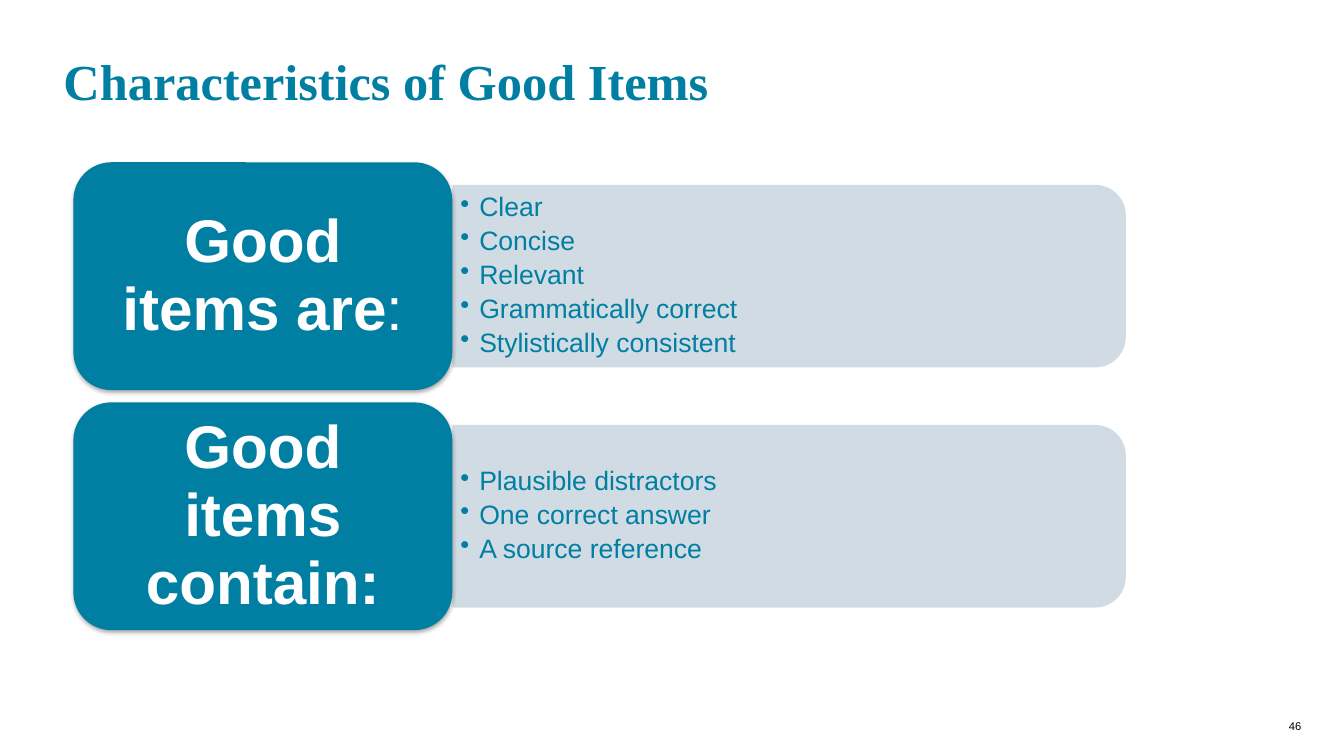
from dataclasses import dataclass

from lxml import etree
from pptx import Presentation
from pptx.dml.color import RGBColor
from pptx.enum.shapes import MSO_SHAPE
from pptx.enum.text import MSO_ANCHOR, PP_ALIGN
from pptx.oxml import parse_xml
from pptx.oxml.ns import nsdecls, qn
from pptx.shapes.autoshape import Shape
from pptx.slide import Slide
from pptx.text.text import TextFrame
from pptx.util import Cm, Pt

ROUNDED = MSO_SHAPE.ROUNDED_RECTANGLE
ROUNDED_TOP = MSO_SHAPE.ROUND_2_SAME_RECTANGLE
MIDDLE = MSO_ANCHOR.MIDDLE
CENTER = PP_ALIGN.CENTER

TEAL = RGBColor(0x00, 0x7F, 0xA3)
PALE = RGBColor(0xCC, 0xD8, 0xE0)
WHITE = RGBColor(0xFF, 0xFF, 0xFF)
BLACK = RGBColor(0x00, 0x00, 0x00)
BODY_FONT = "Arial"
TITLE_FONT = "Times New Roman"

CARD_LEFT, CARD_TOP = 1.85, 4.09
CARD_WIDTH, CARD_HEIGHT = 9.55, 5.74
ROW_STEP = 6.05
PANEL_LEFT = CARD_LEFT + CARD_WIDTH
PANEL_WIDTH, PANEL_HEIGHT = 16.97, 4.6
BULLETS_WIDTH, BULLETS_HEIGHT = 16.74, 4.14
BULLET_INDENT = Cm(0.48)


@dataclass(frozen=True)
class Row:
    heading: str
    ending: str  # closing part of the heading, not bold
    bullets: tuple[str, ...]


ROWS = (
    Row("Good items are", ":",
        ("Clear", "Concise", "Relevant", "Grammatically correct", "Stylistically consistent")),
    Row("Good items contain:", "",
        ("Plausible distractors", "One correct answer", "A source reference")),
)


def set_margins(frame: TextFrame, horizontal: float, vertical: float) -> None:
    frame.margin_left = frame.margin_right = Cm(horizontal)
    frame.margin_top = frame.margin_bottom = Cm(vertical)


def add_text_box(slide: Slide, left: float, top: float, width: float, height: float) -> TextFrame:
    frame = slide.shapes.add_textbox(Cm(left), Cm(top), Cm(width), Cm(height)).text_frame
    frame.word_wrap = True
    return frame


def add_label(frame: TextFrame, text: str, font_name: str, size: int, color: RGBColor,
              bold: bool = False) -> None:
    paragraph = frame.paragraphs[0]
    paragraph.text = text
    font = paragraph.font
    font.name, font.size, font.bold = font_name, Pt(size), bold
    font.color.rgb = color


def add_filled_shape(slide: Slide, kind: MSO_SHAPE, left: float, top: float,
                     width: float, height: float, color: RGBColor) -> Shape:
    shape = slide.shapes.add_shape(kind, Cm(left), Cm(top), Cm(width), Cm(height))
    shape.shadow.inherit = False
    shape.fill.solid()
    shape.fill.fore_color.rgb = color
    shape.line.fill.background()
    return shape


def add_panel(slide: Slide, middle: float) -> None:
    """Draw the pale bar: a shape with two round top corners, turned to the right."""
    center = PANEL_LEFT + PANEL_WIDTH / 2
    panel = add_filled_shape(slide, ROUNDED_TOP, center - PANEL_HEIGHT / 2,
                             middle - PANEL_WIDTH / 2, PANEL_HEIGHT, PANEL_WIDTH, PALE)
    panel.rotation = 90
    color = panel._element.spPr.find(qn("a:solidFill"))[0]
    etree.SubElement(color, qn("a:alpha"), val="90000")


def add_bullets(slide: Slide, middle: float, bullets: tuple[str, ...]) -> None:
    frame = add_text_box(slide, PANEL_LEFT, middle - BULLETS_HEIGHT / 2,
                         BULLETS_WIDTH, BULLETS_HEIGHT)
    frame.vertical_anchor = MIDDLE
    set_margins(frame, 0.2, 0.1)
    frame.text = "\n".join(bullets)
    for paragraph in frame.paragraphs:
        paragraph.line_spacing = 0.9
        paragraph.space_after = Pt(3.7)
        paragraph.font.name = BODY_FONT
        paragraph.font.size = Pt(19)
        paragraph.font.color.rgb = TEAL
        properties = paragraph._p.get_or_add_pPr()
        properties.set("marL", str(BULLET_INDENT))
        properties.set("indent", str(-BULLET_INDENT))
        bullet = parse_xml(f'<a:buChar {nsdecls("a")} char="•"/>')
        properties.insert_element_before(bullet, "a:tabLst", "a:defRPr", "a:extLst")


def add_card(slide: Slide, top: float, row: Row) -> None:
    card = add_filled_shape(slide, ROUNDED, CARD_LEFT, top, CARD_WIDTH, CARD_HEIGHT, TEAL)
    effects = card._element.spPr.find(qn("a:effectLst"))
    effects.append(parse_xml(
        f'<a:outerShdw {nsdecls("a")} blurRad="{Pt(3.1)}" dist="{Pt(1.8)}" dir="5400000" '
        'rotWithShape="0"><a:srgbClr val="000000"><a:alpha val="35000"/></a:srgbClr>'
        '</a:outerShdw>'))
    frame = card.text_frame
    frame.word_wrap = True
    frame.vertical_anchor = MIDDLE
    set_margins(frame, 0.45, 0.23)
    add_label(frame, row.heading, BODY_FONT, 43, WHITE, bold=True)
    paragraph = frame.paragraphs[0]
    paragraph.alignment = CENTER
    paragraph.line_spacing = 0.94
    if row.ending:
        ending = paragraph.add_run()
        ending.text = row.ending
        ending.font.bold = False


def main() -> None:
    presentation = Presentation()
    presentation.slide_width, presentation.slide_height = Cm(33.87), Cm(19.05)
    slide = presentation.slides.add_slide(presentation.slide_layouts[6])

    title = add_text_box(slide, 1.35, 1.09, 30.96, 1.88)
    title.vertical_anchor = MIDDLE
    add_label(title, "Characteristics of Good Items", TITLE_FONT, 36, TEAL, bold=True)

    for index, row in enumerate(ROWS):
        top = CARD_TOP + index * ROW_STEP
        middle = top + CARD_HEIGHT / 2
        add_panel(slide, middle)
        add_bullets(slide, middle, row.bullets)
        add_card(slide, top, row)

    page_number = add_text_box(slide, 32.23, 18.01, 0.89, 0.56)
    page_number.word_wrap = False
    add_label(page_number, "46", BODY_FONT, 8, BLACK)

    presentation.save("out.pptx")


if __name__ == "__main__":
    main()
